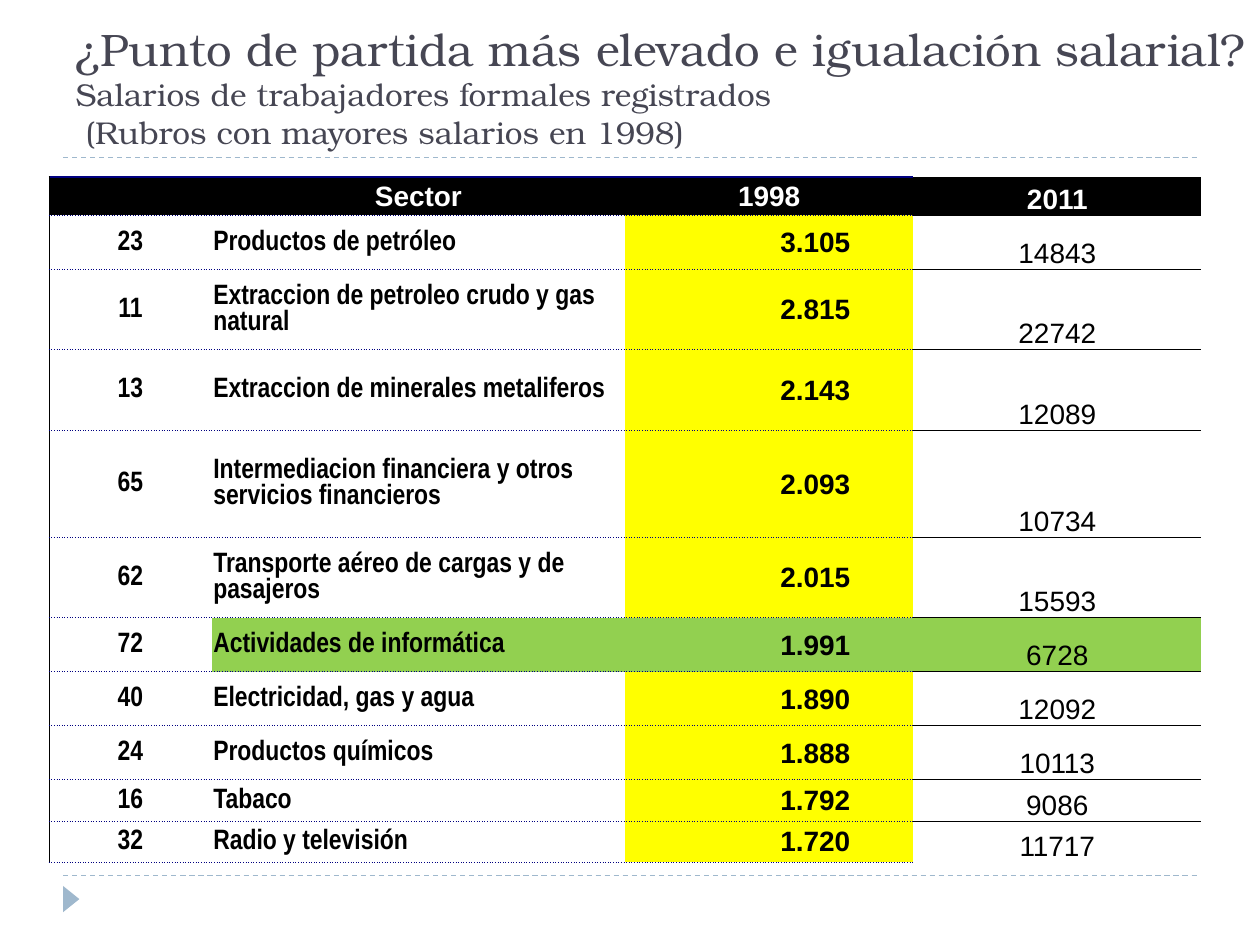
from typing import NamedTuple, Optional

from lxml import etree
from pptx import Presentation
from pptx.dml.color import RGBColor
from pptx.enum.dml import MSO_LINE
from pptx.enum.shapes import MSO_CONNECTOR, MSO_SHAPE
from pptx.enum.text import MSO_ANCHOR, MSO_AUTO_SIZE, PP_ALIGN
from pptx.oxml.ns import qn
from pptx.util import Cm, Pt

STRAIGHT = MSO_CONNECTOR.STRAIGHT
TRIANGLE = MSO_SHAPE.ISOSCELES_TRIANGLE
DASH = MSO_LINE.DASH
MIDDLE, BOTTOM = MSO_ANCHOR.MIDDLE, MSO_ANCHOR.BOTTOM
LEFT, CENTER, RIGHT = PP_ALIGN.LEFT, PP_ALIGN.CENTER, PP_ALIGN.RIGHT

BLACK = RGBColor(0x00, 0x00, 0x00)
WHITE = RGBColor(0xFF, 0xFF, 0xFF)
NAVY = RGBColor(0x00, 0x00, 0x80)
YELLOW = RGBColor(0xFF, 0xFF, 0x00)
GREEN = RGBColor(0x92, 0xD0, 0x50)
SLATE = RGBColor(0x46, 0x46, 0x53)
PALE_BLUE = RGBColor(0x9F, 0xB8, 0xCD)

TITLE_FONT = "TeX Gyre Bonum"
TITLE_LINES = [
    ("¿Punto de partida más elevado e igualación salarial?", 26),
    ("Salarios de trabajadores formales registrados", 18),
    (" (Rubros con mayores salarios en 1998)", 18),
]


class Sector(NamedTuple):
    code: str
    name: str
    wage_1998: str
    wage_2011: str
    height: float


class Column(NamedTuple):
    width: float
    font: str
    bold: bool
    align: PP_ALIGN
    anchor: MSO_ANCHOR
    right_margin: float
    fill: Optional[RGBColor]


class Border(NamedTuple):
    color: RGBColor
    width: float = 0.5
    dash: str = "solid"


HEADER = Sector("", "Sector", "1998", "2011", 0.77)
SECTORS = [
    Sector("23", "Productos de petróleo", "3.105", "14843", 1.09),
    Sector("11", "Extraccion de petroleo crudo y gas natural", "2.815", "22742", 1.62),
    Sector("13", "Extraccion de minerales metaliferos", "2.143", "12089", 1.62),
    Sector("65", "Intermediacion financiera y otros servicios financieros",
           "2.093", "10734", 2.16),
    Sector("62", "Transporte aéreo de cargas y de pasajeros", "2.015", "15593", 1.62),
    Sector("72", "Actividades de informática", "1.991", "6728", 1.09),
    Sector("40", "Electricidad, gas y agua", "1.890", "12092", 1.09),
    Sector("24", "Productos químicos", "1.888", "10113", 1.09),
    Sector("16", "Tabaco", "1.792", "9086", 0.83),
    Sector("32", "Radio y televisión", "1.720", "11717", 0.83),
]
HIGHLIGHTED_CODE = "72"
COLUMNS = [
    Column(3.28, "Arial Narrow", True, CENTER, MIDDLE, 0.03, WHITE),
    Column(8.33, "Arial Narrow", True, LEFT, MIDDLE, 0.03, WHITE),
    Column(5.81, "Arial", True, RIGHT, MIDDLE, 1.27, YELLOW),
    Column(5.81, "Arial", False, CENTER, BOTTOM, 0.03, None),
]
DOTTED = Border(NAVY, dash="sysDot")
HEADER_TOP = Border(NAVY, 1)
THIN = Border(BLACK)


def add_title(page) -> None:
    title = page.shapes.title
    title.left, title.top, title.width, title.height = Cm(1.27), 0, Cm(24.13), Cm(3.17)
    frame = title.text_frame
    frame.text = "\v".join(line for line, size in TITLE_LINES)
    frame.word_wrap = True
    frame.auto_size = MSO_AUTO_SIZE.NONE
    frame.vertical_anchor = BOTTOM
    frame.margin_right = 0
    para = frame.paragraphs[0]
    para.alignment = LEFT
    for span, (line, size) in zip(para.runs, TITLE_LINES):
        span.font.name = TITLE_FONT
        span.font.size = Pt(size)
        span.font.color.rgb = SLATE


def add_rule(page, top: float) -> None:
    rule = page.shapes.add_connector(STRAIGHT, Cm(1.27), Cm(top), Cm(24.13), Cm(top))
    rule.line.color.rgb = PALE_BLUE
    rule.line.width = Pt(0.75)
    rule.line.dash_style = DASH
    etree.SubElement(rule._element.spPr, qn("a:effectLst"))


def add_marker(page) -> None:
    marker = page.shapes.add_shape(TRIANGLE, Cm(1.17), Cm(17.96), Cm(0.53), Cm(0.33))
    marker.rotation = 90
    marker.shadow.inherit = False
    marker.fill.solid()
    marker.fill.fore_color.rgb = PALE_BLUE
    marker.line.fill.background()


def set_border(cell, side: str, border: Optional[Border]) -> None:
    line = etree.SubElement(cell._tc.get_or_add_tcPr(), qn(f"a:ln{side}"))
    if border is None:
        line.set("w", "0")
        etree.SubElement(line, qn("a:noFill"))
        return
    line.set("w", str(Pt(border.width)))
    fill = etree.SubElement(line, qn("a:solidFill"))
    etree.SubElement(fill, qn("a:srgbClr"), val=str(border.color))
    etree.SubElement(line, qn("a:prstDash"), val=border.dash)


def set_borders(cell, row: int, col: int) -> None:
    last_column = col == len(COLUMNS) - 1
    if last_column:
        top = THIN
        bottom = None if row == len(SECTORS) else THIN
    else:
        top = HEADER_TOP if row == 0 else DOTTED
        bottom = DOTTED
    left = THIN if col == 0 else None
    for side, border in (("L", left), ("R", None), ("T", top), ("B", bottom)):
        set_border(cell, side, border)


def set_fill(cell, color: Optional[RGBColor]) -> None:
    if color is None:
        cell.fill.background()
    else:
        cell.fill.solid()
        cell.fill.fore_color.rgb = color


def fill_cell(cell, text: str, column: Column, is_header: bool) -> None:
    cell.text = text
    cell.vertical_anchor = column.anchor
    cell.margin_left = cell.margin_top = Cm(0.03)
    cell.margin_bottom = 0
    cell.margin_right = Cm(0.03 if is_header else column.right_margin)
    para = cell.text_frame.paragraphs[0]
    para.alignment = CENTER if is_header else column.align
    for span in para.runs:
        span.font.name = "Arial" if is_header else column.font
        span.font.size = Pt(16)
        span.font.bold = is_header or column.bold
        span.font.color.rgb = WHITE if is_header else BLACK
    if not text:
        # An empty cell takes its line height from the paragraph end
        etree.SubElement(para._p, qn("a:endParaRPr"), sz="1600")


def add_wage_table(page) -> None:
    rows = [HEADER, *SECTORS]
    frame = page.shapes.add_table(
        len(rows), len(COLUMNS), Cm(0.99), Cm(3.57),
        Cm(sum(column.width for column in COLUMNS)),
        Cm(sum(sector.height for sector in rows)))
    table = frame.table
    table.first_row = table.horz_banding = False
    for col, column in enumerate(COLUMNS):
        table.columns[col].width = Cm(column.width)
    for row, sector in enumerate(rows):
        table.rows[row].height = Cm(sector.height)
        for col, column in enumerate(COLUMNS):
            cell = table.cell(row, col)
            fill_cell(cell, sector[col], column, row == 0)
            set_borders(cell, row, col)
            if row == 0:
                color = BLACK
            elif sector.code == HIGHLIGHTED_CODE and col > 0:
                color = GREEN
            else:
                color = column.fill
            set_fill(cell, color)


def main() -> None:
    deck = Presentation()
    deck.slide_width, deck.slide_height = Cm(25.4), Cm(19.05)
    page = deck.slides.add_slide(deck.slide_layouts[5])
    # Frame of the page
    for top in (17.65, 3.18):
        add_rule(page, top)
    add_marker(page)
    # Content
    add_title(page)
    add_wage_table(page)
    deck.save("out.pptx")


if __name__ == "__main__":
    main()
